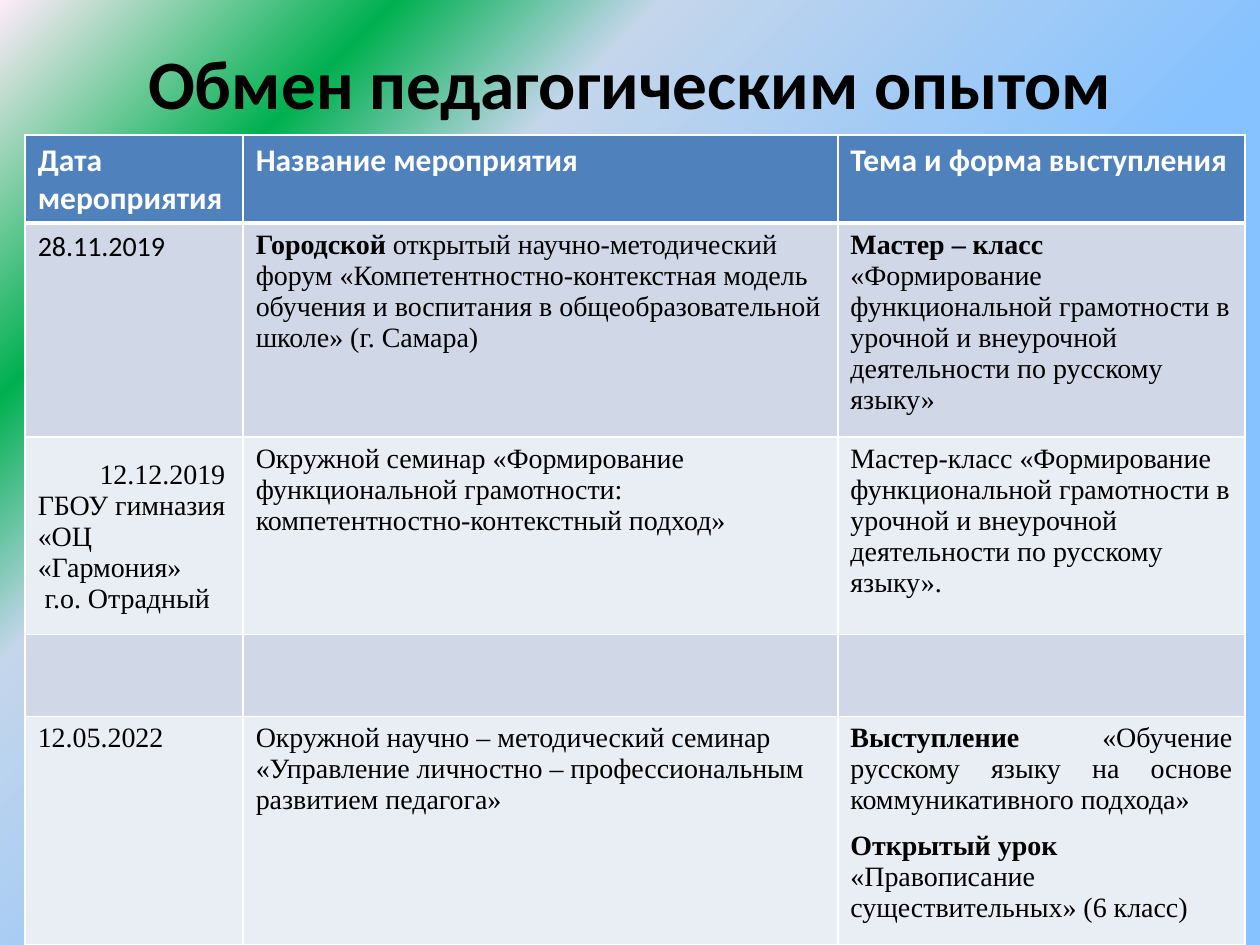
from lxml import etree
from pptx import Presentation
from pptx.dml.color import RGBColor
from pptx.enum.text import MSO_ANCHOR, PP_ALIGN
from pptx.oxml import parse_xml
from pptx.oxml.ns import nsdecls, qn
from pptx.util import Inches, Pt

SERIF = "Times New Roman"
SANS = "Calibri"
HEADER_FILL = "4F81BD"
BAND_FILLS = ["D0D8E8", "E9EDF4"]
COLUMN_WIDTHS = [1.73, 4.72, 3.23]
ROW_HEIGHT = 0.65
GRADIENT = [(0, "85C2FF"), (40, "85C2FF"), (70, "C4D6EB"), (82, "00B050"), (100, "FFEBFA")]

HEADERS = ["Дата мероприятия", "Название мероприятия", "Тема и форма выступления"]
# Each cell is a list of paragraphs, each paragraph a pair: bold start, plain rest
EVENTS = [
    [
        [("", "28.11.2019")],
        [("Городской", " открытый научно-методический форум «Компетентностно-контекстная модель "
          "обучения и воспитания в общеобразовательной школе» (г. Самара)")],
        [("Мастер – класс", " «Формирование функциональной грамотности в урочной и внеурочной "
          "деятельности по русскому языку»")],
    ],
    [
        [("", "12.12.2019"), ("", "ГБОУ гимназия «ОЦ «Гармония»"), ("", " г.о. Отрадный")],
        [("", "Окружной семинар «Формирование функциональной грамотности: "
          "компетентностно-контекстный подход»")],
        [("", "Мастер-класс «Формирование функциональной грамотности в урочной и внеурочной "
          "деятельности по русскому языку».")],
    ],
    [[], [], []],
    [
        [("", "12.05.2022")],
        [("", "Окружной научно – методический семинар «Управление личностно – "
          "профессиональным развитием педагога»")],
        [("Выступление ", "«Обучение русскому языку на основе коммуникативного подхода»"),
         ("Открытый урок", " «Правописание существительных» (6 класс)")],
    ],
]


def color(value):
    return RGBColor.from_string(value)


def set_font(para, name, size, value, bold=None):
    para.font.name = name
    para.font.size = Pt(size)
    para.font.color.rgb = color(value)
    para.font.bold = bold


def paint_background(page):
    stops = "".join(f'<a:gs pos="{position * 1000}"><a:srgbClr val="{value}"/></a:gs>'
                    for position, value in GRADIENT)
    background = parse_xml(
        f'<p:bg {nsdecls("p", "a")}><p:bgPr><a:gradFill rotWithShape="1"><a:gsLst>{stops}</a:gsLst>'
        '<a:path path="circle"><a:fillToRect l="100000" t="100000"/></a:path>'
        '</a:gradFill><a:effectLst/></p:bgPr></p:bg>')
    page.shapes._spTree.getparent().insert(0, background)


def add_title(page, left, top, width, height):
    box = page.shapes.add_textbox(Inches(left), Inches(top), Inches(width), Inches(height))
    frame = box.text_frame
    frame.word_wrap = True
    frame.vertical_anchor = MSO_ANCHOR.MIDDLE
    para = frame.paragraphs[0]
    para.text = "Обмен педагогическим опытом"
    para.alignment = PP_ALIGN.CENTER
    set_font(para, SANS, 39.6, "000000", True)


def style_cell(cell, fill, top=1, bottom=1):
    properties = cell._tc.get_or_add_tcPr()
    for side, width in (("L", 1), ("R", 1), ("T", top), ("B", bottom)):
        line = etree.SubElement(properties, qn(f"a:ln{side}"), w=str(Pt(width)))
        solid = etree.SubElement(line, qn("a:solidFill"))
        etree.SubElement(solid, qn("a:srgbClr"), val="FFFFFF")
    cell.fill.solid()
    cell.fill.fore_color.rgb = color(fill)


def write_cell(cell, paragraphs, font):
    for index, (strong, plain) in enumerate(paragraphs):
        frame = cell.text_frame
        para = frame.add_paragraph() if index else frame.paragraphs[0]
        set_font(para, font, 16, "000000")
        for text, bold in ((strong, True), (plain, False)):
            if text:
                span = para.add_run()
                span.text = text
                span.font.bold = bold


def add_events_table(page, left, top, width):
    rows = len(EVENTS) + 1
    table = page.shapes.add_table(rows, len(HEADERS), Inches(left), Inches(top),
                                  Inches(width), Inches(rows * ROW_HEIGHT)).table
    for column, column_width in zip(table.columns, COLUMN_WIDTHS):
        column.width = Inches(column_width)

    # Header row
    for column, text in enumerate(HEADERS):
        cell = table.cell(0, column)
        style_cell(cell, HEADER_FILL, bottom=3)
        cell.text = text
        set_font(cell.text_frame.paragraphs[0], SANS, 18, "FFFFFF", True)

    # Event rows in alternating bands
    for row, event in enumerate(EVENTS, start=1):
        for column, paragraphs in enumerate(event):
            cell = table.cell(row, column)
            style_cell(cell, BAND_FILLS[(row - 1) % 2], top=3 if row == 1 else 1)
            write_cell(cell, paragraphs, SANS if (row, column) == (1, 0) else SERIF)

    # Indented date above the venue
    date = table.cell(2, 0).text_frame.paragraphs[0]
    date.line_spacing = 1.5
    date._p.get_or_add_pPr().set("indent", str(Inches(0.49)))

    # Justified talk above the open lesson
    talk = table.cell(4, 2).text_frame.paragraphs[0]
    talk.alignment = PP_ALIGN.JUSTIFY
    talk.space_after = Pt(8)


def main():
    deck = Presentation()
    deck.slide_width = Inches(10)
    deck.slide_height = Inches(7.5)
    page = deck.slides.add_slide(deck.slide_layouts[6])
    paint_background(page)
    add_title(page, 0.5, 0.3, 9, 0.69)
    add_events_table(page, 0.2, 1.07, sum(COLUMN_WIDTHS))
    deck.save("out.pptx")


if __name__ == "__main__":
    main()
